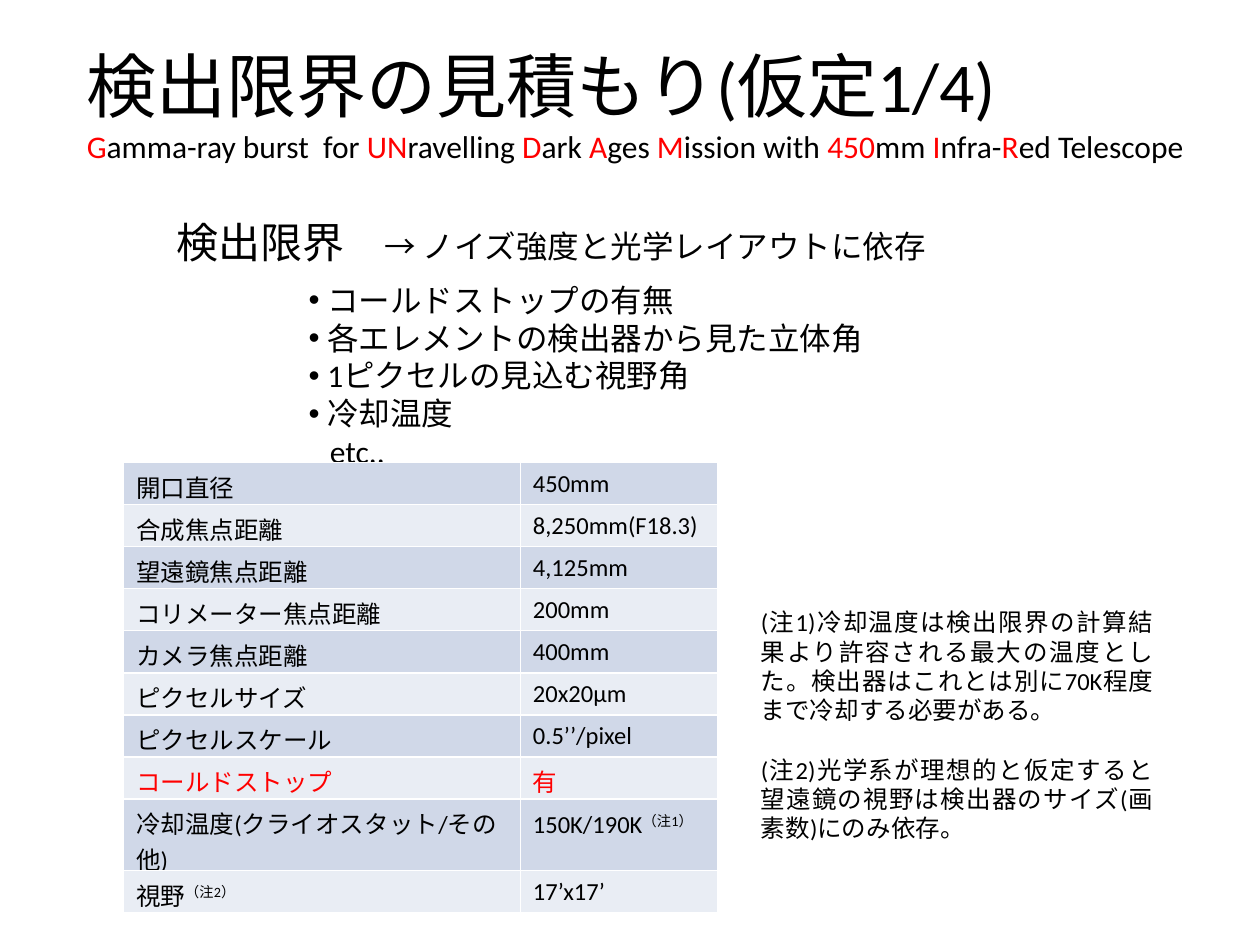
"""Build the detection limit slide with its table of assumed parameters."""
import pptx
import pptx.dml.color
import pptx.enum.text
import pptx.oxml
import pptx.oxml.ns
import pptx.util
from pptx.util import Inches

HUES = {"ink": "000000", "red": "FF0000", "line": "FFFFFF", "dark": "D0D8E8", "pale": "E9EDF4"}
FONT = "Calibri"
TITLE = "検出限界の見積もり(仮定1/4)"
NAME = ("|G|amma-ray burst  for |UN|ravelling |D|ark |A|ges |M|ission with "
        "|450|mm |I|nfra-|R|ed Telescope")
ITEMS = ["コールドストップの有無", "各エレメントの検出器から見た立体角",
         "1ピクセルの見込む視野角", "冷却温度"]
NOTES = ["(注1)冷却温度は検出限界の計算結果より許容される最大の温度とした。"
         "検出器はこれとは別に70K程度まで冷却する必要がある。",
         "(注2)光学系が理想的と仮定すると望遠鏡の視野は検出器のサイズ(画素数)にのみ依存。"]
ROWS = [
    ("開口直径", "450mm"),
    ("合成焦点距離", "8,250mm(F18.3)"),
    ("望遠鏡焦点距離", "4,125mm"),
    ("コリメーター焦点距離", "200mm"),
    ("カメラ焦点距離", "400mm"),
    ("ピクセルサイズ", "20x20μm"),
    ("ピクセルスケール", "0.5’’/pixel"),
    ("コールドストップ", "有"),
    ("冷却温度(クライオスタット/その他)", "150K/190K|（注1）|"),
    ("視野|（注2）|", "17’x17’"),
]
KEY_ROW = 7


def color(name):
    """Return the named colour."""
    return pptx.dml.color.RGBColor.from_string(HUES[name])


def node(tag, **attrs):
    """Return a new drawing element."""
    item = pptx.oxml.parse_xml(f"<a:{tag} {pptx.oxml.ns.nsdecls('a')}/>")
    for key, value in attrs.items():
        item.set(key, str(value))
    return item


def write(para, text, size=14, hue="ink", mark="red", align=None, before=0, inset=0, bullet=False):
    """Write text in a paragraph, with the parts between bars marked."""
    props = para._p.get_or_add_pPr()
    if inset:
        props.set("marL", str(Inches(inset)))
    if bullet:
        props.set("indent", str(-Inches(inset)))
        props.append(node("buFont", typeface="Arial"))
        props.append(node("buChar", char="•"))
    para.alignment = align
    if before:
        para.space_before = pptx.util.Pt(before)
    for spot, part in enumerate(text.split("|")):
        if not part:
            continue
        run = para.add_run()
        run.text = part
        run.font.name = FONT
        run.font.size = pptx.util.Pt(size)
        marked = spot % 2 == 1
        run.font.color.rgb = color("red" if marked and mark == "red" else hue)
        if marked and mark == "super":
            run._r.get_or_add_rPr().set("baseline", "30000")


def box(slide, left, top, width, height, paras, wrap=True):
    """Add a text box holding pairs of text and format."""
    shape = slide.shapes.add_textbox(*map(Inches, (left, top, width, height)))
    frame = shape.text_frame
    frame.word_wrap = wrap
    frame.auto_size = pptx.enum.text.MSO_AUTO_SIZE.SHAPE_TO_FIT_TEXT
    for spot, (text, style) in enumerate(paras):
        para = frame.add_paragraph() if spot else frame.paragraphs[0]
        write(para, text, **style)


def edge(cell):
    """Draw a thin light line on each side of a cell."""
    props = cell._tc.get_or_add_tcPr()
    for side in ("lnL", "lnR", "lnT", "lnB"):
        line = node(side, w=pptx.util.Pt(1))
        fill = node("solidFill")
        fill.append(node("srgbClr", val=HUES["line"]))
        line.append(fill)
        props.append(line)


def grid(slide):
    """Add the parameter table."""
    frame = slide.shapes.add_table(len(ROWS), 2, Inches(0.98), Inches(3.67),
                                   Inches(4.72), Inches(3.33))
    table = frame.table
    table.first_row = table.horz_banding = False
    for col, width in zip(table.columns, (3.15, 1.57)):
        col.width = Inches(width)
    for r, texts in enumerate(ROWS):
        table.rows[r].height = Inches(0.33)
        for c, text in enumerate(texts):
            cell = table.cell(r, c)
            hue = "red" if r == KEY_ROW else "ink"
            write(cell.text_frame.paragraphs[0], text, hue=hue, mark="super")
            edge(cell)
            cell.fill.solid()
            cell.fill.fore_color.rgb = color("pale" if r % 2 else "dark")


def main():
    """Build and save the slide."""
    deck = pptx.Presentation()
    deck.slide_width, deck.slide_height = Inches(10), Inches(7.5)
    slide = deck.slides.add_slide(deck.slide_layouts[6])
    box(slide, 2.95, 1.75, 4.8, 0.4, [("→ ノイズ強度と光学レイアウトに依存", {"size": 18})])
    box(slide, 1.3, 1.67, 1.55, 0.5, [("検出限界", {"size": 24})], wrap=False)
    items = [(text, {"size": 18, "inset": 0.15, "bullet": True}) for text in ITEMS]
    items.append(("etc..", {"size": 18, "inset": 0.17}))
    box(slide, 2.35, 2.18, 4.65, 1.6, items, wrap=False)
    grid(slide)
    just = pptx.enum.text.PP_ALIGN.JUSTIFY
    notes = [(text, {"align": just, "before": 17 * spot}) for spot, text in enumerate(NOTES)]
    box(slide, 5.94, 4.77, 3.31, 1.99, notes)
    box(slide, 0.59, 0.29, 9.41, 1.08, [(TITLE, {"size": 40}), (NAME, {"size": 18})])
    deck.save("out.pptx")


if __name__ == "__main__":
    main()
